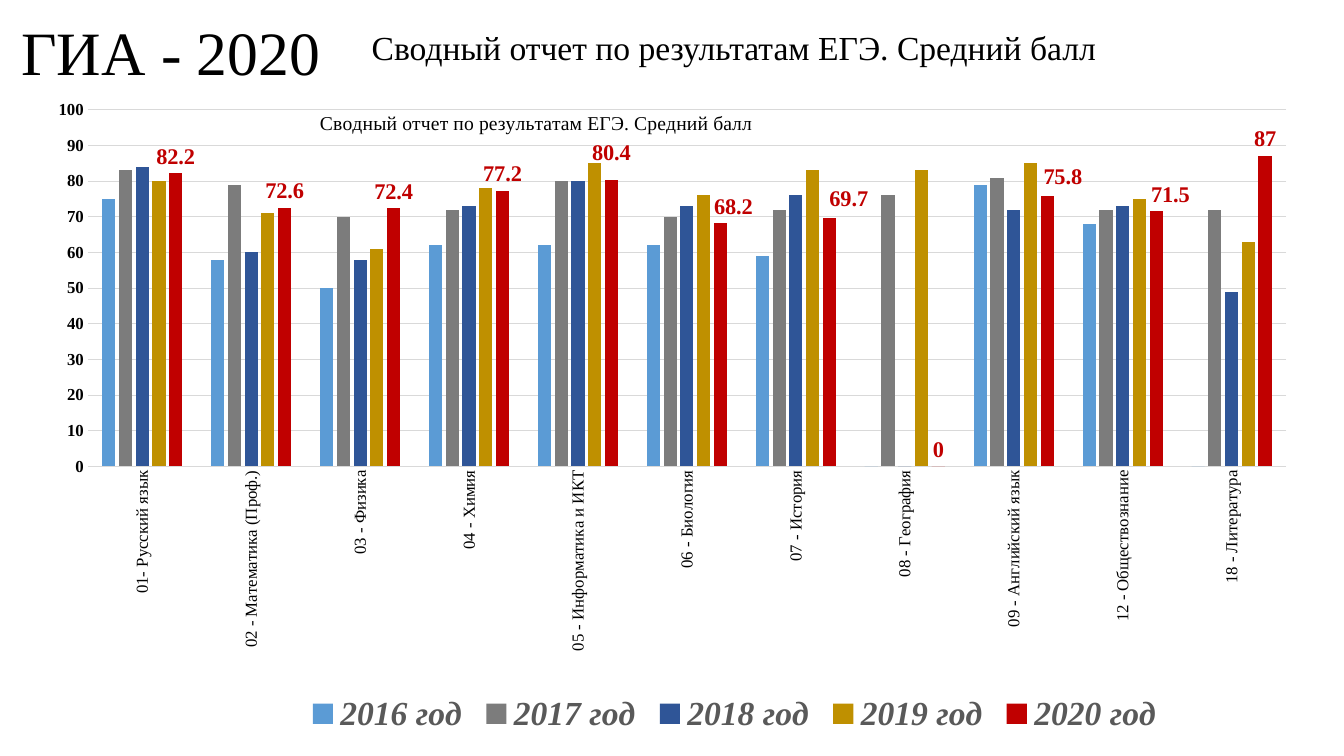
"""Build the slide with average exam scores by subject and year."""
import pptx
import pptx.chart.data
import pptx.dml.color
import pptx.enum.chart
import pptx.enum.text
import pptx.oxml
import pptx.oxml.ns
import pptx.util

Pt = pptx.util.Pt
RGBColor = pptx.dml.color.RGBColor
BLACK = RGBColor(0x00, 0x00, 0x00)
GRID_GREY = RGBColor(0xD9, 0xD9, 0xD9)
LEGEND_GREY = RGBColor(0x59, 0x59, 0x59)
BLUE = RGBColor(0x5B, 0x9B, 0xD5)
GREY = RGBColor(0x7C, 0x7C, 0x7C)
NAVY = RGBColor(0x2F, 0x55, 0x97)
GOLD = RGBColor(0xBF, 0x90, 0x00)
RED = RGBColor(0xC0, 0x00, 0x00)

REPORT_TITLE = "Сводный отчет по результатам ЕГЭ. Средний балл"
SUBJECTS = [
    "01- Русский язык", "02 - Математика (Проф.)", "03 - Физика", "04 - Химия",
    "05 - Информатика и ИКТ", "06 - Биология", "07 - История", "08 - География",
    "09 - Английский язык", "12 - Обществознание", "18 - Литература",
]
YEARS = [
    ("2016 год", BLUE, [75, 58, 50, 62, 62, 62, 59, 0, 79, 68, 0]),
    ("2017 год", GREY, [83, 79, 70, 72, 80, 70, 72, 76, 81, 72, 72]),
    ("2018 год", NAVY, [84, 60, 58, 73, 80, 73, 76, 0, 72, 73, 49]),
    ("2019 год", GOLD, [80, 71, 61, 78, 85, 76, 83, 83, 85, 75, 63]),
    ("2020 год", RED,
     [82.2, 72.6, 72.4, 77.2, 80.4, 68.2, 69.7, 0, 75.8, 71.5, 87]),
]
LABEL_SHIFTS = {4: (0, -0.015), 5: (0.01, 0), 6: (0.015, -0.004),
                8: (0.012, -0.004), 9: (0.011, 0)}


def apply_format(target, values):
    """Set each named attribute of the target."""
    for name, value in values.items():
        setattr(target, name, value)


def set_layout(parent, index, modes, **fractions):
    """Give a chart part a manual layout in fractions of the chart."""
    for old_layout in parent.findall(pptx.oxml.ns.qn("c:layout")):
        parent.remove(old_layout)
    settings = {**modes, **fractions}
    children = "".join(f'<c:{name} val="{value}"/>' for name, value in settings.items())
    parent.insert(index, pptx.oxml.parse_xml(
        f'<c:layout {pptx.oxml.ns.nsdecls("c")}><c:manualLayout>'
        f"{children}</c:manualLayout></c:layout>"))


class SlideBuilder:
    """Hold the text style and the current slide."""

    font_name = "Times New Roman"
    edge_modes = {"xMode": "edge", "yMode": "edge"}

    def __init__(self, slide):
        """Keep the slide that receives the elements."""
        self.slide = slide

    def style_font(self, font, size, color=BLACK, **values):
        """Apply the common typeface with a size and a colour."""
        apply_format(font, {"name": self.font_name, "size": Pt(size), **values})
        font.color.rgb = color

    def add_text(self, text, box, size, frame_format, paragraph_format):
        """Add a one-paragraph text box."""
        shape = self.slide.shapes.add_textbox(*map(Pt, box))
        apply_format(shape.text_frame, {"word_wrap": True, **frame_format})
        paragraph = shape.text_frame.paragraphs[0]
        apply_format(paragraph, paragraph_format)
        run = paragraph.add_run()
        run.text = text
        self.style_font(run.font, size)

    def add_score_chart(self, box):
        """Add the clustered column chart of scores."""
        data = pptx.chart.data.CategoryChartData()
        data.categories = SUBJECTS
        for year, _, scores in YEARS:
            data.add_series(year, scores)
        chart = self.slide.shapes.add_chart(
            pptx.enum.chart.XL_CHART_TYPE.COLUMN_CLUSTERED,
            *map(Pt, box), data).chart
        self.style_font(chart.font, 10, name="Calibri")
        plot = chart.plots[0]
        apply_format(plot, {"gap_width": 219, "overlap": -27, "vary_by_categories": False})
        for series, (_, color, _) in zip(plot.series, YEARS):
            series.format.fill.solid()
            series.format.fill.fore_color.rgb = color
            series.invert_if_negative = False
        self.style_axes(chart)
        self.style_labels(plot.series[-1])
        self.style_title_and_legend(chart)
        plot_area = chart._chartSpace.chart.plotArea
        set_layout(plot_area, 0, {"layoutTarget": "inner", **self.edge_modes},
                   x=0.059, y=0.032, w=0.923, h=0.542)

    def style_axes(self, chart):
        """Format both axes and the gridlines."""
        no_tick = pptx.enum.chart.XL_TICK_MARK.NONE
        subject_axis, score_axis = chart.category_axis, chart.value_axis
        for axis in (subject_axis, score_axis):
            apply_format(axis, {"major_tick_mark": no_tick, "minor_tick_mark": no_tick})
            self.style_font(axis.tick_labels.font, 12, bold=axis is score_axis)
        apply_format(score_axis, {"minimum_scale": 0, "maximum_scale": 100,
                                  "major_unit": 10, "has_major_gridlines": True})
        apply_format(score_axis.tick_labels,
                     {"number_format": "0", "number_format_is_linked": False})
        score_axis.format.line.fill.background()
        for line in (subject_axis.format.line, score_axis.major_gridlines.format.line):
            line.width = Pt(0.75)
            line.color.rgb = GRID_GREY
        for body in subject_axis._element.xpath("c:txPr/a:bodyPr"):
            body.set("rot", "-5400000")
            body.set("vert", "horz")

    def style_labels(self, series):
        """Show score labels and shift the crowded ones."""
        outside = pptx.enum.chart.XL_LABEL_POSITION.OUTSIDE_END
        labels = series.data_labels
        apply_format(labels, {"show_value": True, "position": outside})
        self.style_font(labels.font, 16, RED, bold=True)
        for index, (shift_x, shift_y) in LABEL_SHIFTS.items():
            label = series.points[index].data_label
            label.position = outside
            self.style_font(label.font, 16, RED, bold=True)
            element = labels._element.xpath(f"c:dLbl[c:idx/@val={index}]")[0]
            set_layout(element, 1, {}, x=shift_x, y=shift_y)

    def style_title_and_legend(self, chart):
        """Place the chart title and the legend."""
        chart.has_title = True
        title = chart.chart_title
        title.text_frame.text = REPORT_TITLE
        run = title.text_frame.paragraphs[0].runs[0]
        self.style_font(run.font, 14, bold=False)
        set_layout(title._element, 1, self.edge_modes, x=0.235, y=0.028)
        chart.has_legend = True
        legend = chart.legend
        apply_format(legend, {"position": pptx.enum.chart.XL_LEGEND_POSITION.BOTTOM,
                              "include_in_layout": False})
        self.style_font(legend.font, 24, LEGEND_GREY, bold=True, italic=True)
        set_layout(legend._element, 1, self.edge_modes, x=0.222, y=0.91, w=0.67, h=0.08)


def main():
    """Create and save the presentation."""
    presentation = pptx.Presentation()
    apply_format(presentation, {"slide_width": Pt(960), "slide_height": Pt(540)})
    slide = presentation.slides.add_slide(presentation.slide_layouts[6])
    builder = SlideBuilder(slide)
    builder.add_text("ГИА - 2020", (8, 5, 261, 70), 44,
                     {"vertical_anchor": pptx.enum.text.MSO_ANCHOR.MIDDLE},
                     {"line_spacing": 0.9})
    builder.add_text(REPORT_TITLE, (212.5, 16, 623.5, 36), 24,
                     {"auto_size": pptx.enum.text.MSO_AUTO_SIZE.SHAPE_TO_FIT_TEXT},
                     {"alignment": pptx.enum.text.PP_ALIGN.CENTER})
    builder.add_score_chart((8, 63.4, 927.4, 470))
    presentation.save("out.pptx")


if __name__ == "__main__":
    main()
